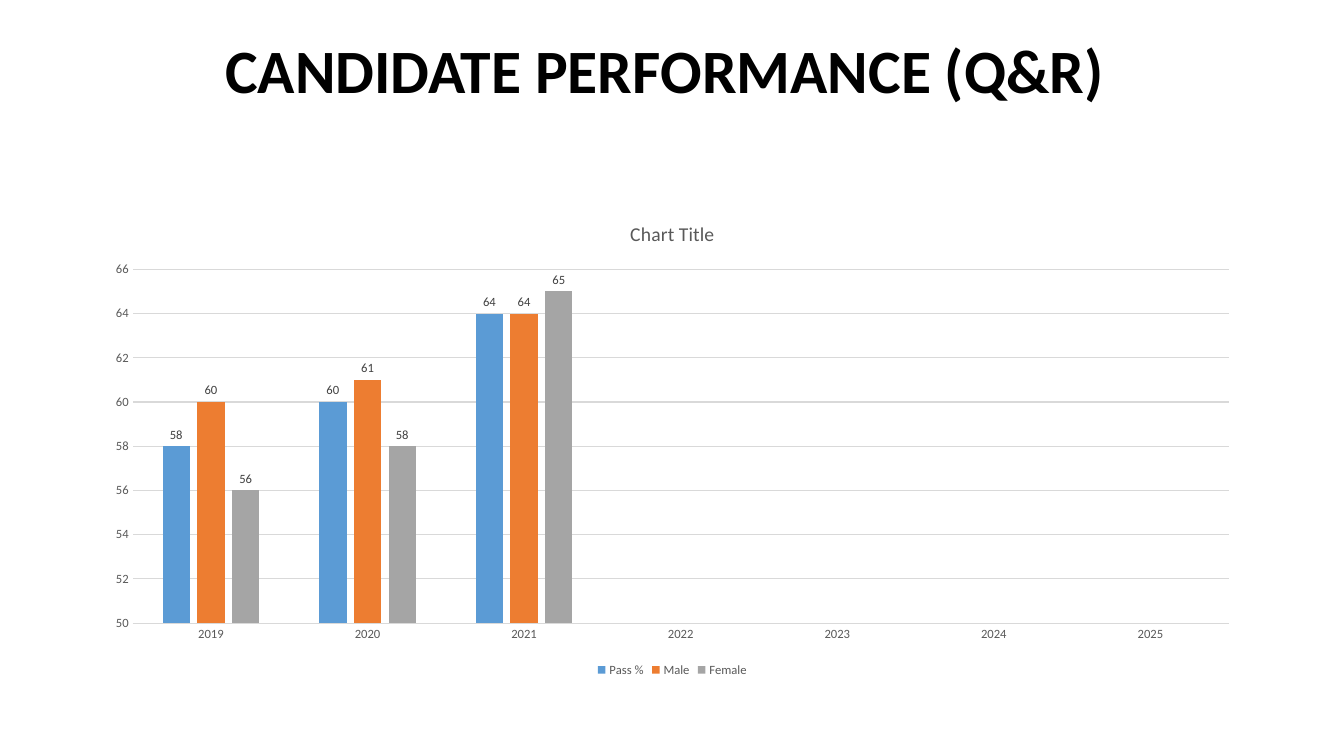
from pptx import Presentation
from pptx.chart.data import CategoryChartData
from pptx.dml.color import RGBColor
from pptx.enum.chart import (XL_CHART_TYPE, XL_LABEL_POSITION,
                             XL_LEGEND_POSITION, XL_TICK_MARK)
from pptx.enum.text import MSO_ANCHOR, PP_ALIGN
from pptx.util import Pt

COLUMNS = XL_CHART_TYPE.COLUMN_CLUSTERED
OUTSIDE = XL_LABEL_POSITION.OUTSIDE_END
BOTTOM = XL_LEGEND_POSITION.BOTTOM
NO_TICK = XL_TICK_MARK.NONE
MIDDLE = MSO_ANCHOR.MIDDLE
CENTER = PP_ALIGN.CENTER

BLACK = RGBColor(0x00, 0x00, 0x00)
DARK = RGBColor(0x40, 0x40, 0x40)
GRAY = RGBColor(0x59, 0x59, 0x59)
PALE = RGBColor(0xD9, 0xD9, 0xD9)
BLUE = RGBColor(0x5B, 0x9B, 0xD5)
ORANGE = RGBColor(0xED, 0x7D, 0x31)
SILVER = RGBColor(0xA5, 0xA5, 0xA5)

FACE = "Calibri"
HEADING = "CANDIDATE PERFORMANCE (Q&R) "
CAPTION = "Chart Title"
YEARS = [str(year) for year in range(2019, 2026)]
SERIES = [
    ("Pass %", BLUE, (58, 60, 64)),
    ("Male", ORANGE, (60, 61, 64)),
    ("Female", SILVER, (56, 58, 65)),
]
SCALE = {"minimum_scale": 50, "maximum_scale": 66, "major_unit": 2}
WIDTH, HEIGHT = 960, 540
HEAD_BOX = (0, 0, WIDTH, 104.4)
CHART_BOX = (66.24, 144, 828, 342.72)


def style(font, size, color, bold=False):
    for name, value in {"name": FACE, "size": Pt(size), "bold": bold}.items():
        setattr(font, name, value)
    font.color.rgb = color


def rule(line):
    line.color.rgb = PALE
    line.width = Pt(0.75)


def add_heading(slide):
    frame = slide.shapes.add_textbox(*map(Pt, HEAD_BOX)).text_frame
    frame.word_wrap = True
    frame.vertical_anchor = MIDDLE
    para = frame.paragraphs[0]
    para.alignment = CENTER
    para.line_spacing = 0.9
    run = para.add_run()
    run.text = HEADING
    style(run.font, 44, BLACK, True)


def add_columns(slide):
    data = CategoryChartData()
    data.categories = YEARS
    for name, _, values in SERIES:
        gaps = (None,) * (len(YEARS) - len(values))
        data.add_series(name, values + gaps)
    chart = slide.shapes.add_chart(COLUMNS, *map(Pt, CHART_BOX), data).chart
    style(chart.font, 10, BLACK)

    chart.has_title = True
    chart.chart_title.include_in_layout = False
    para = chart.chart_title.text_frame.paragraphs[0]
    run = para.add_run()
    run.text = CAPTION
    style(run.font, 14, GRAY)

    chart.has_legend = True
    chart.legend.position = BOTTOM
    chart.legend.include_in_layout = False
    style(chart.legend.font, 9, GRAY)

    years, marks = chart.category_axis, chart.value_axis
    for axis in (years, marks):
        axis.major_tick_mark = axis.minor_tick_mark = NO_TICK
        style(axis.tick_labels.font, 9, GRAY)
    rule(years.format.line)
    marks.format.line.fill.background()
    rule(marks.major_gridlines.format.line)
    for name, value in SCALE.items():
        setattr(marks, name, value)

    plot = chart.plots[0]
    plot.gap_width = 219
    plot.overlap = -27
    plot.vary_by_categories = False
    for series, (_, color, _) in zip(plot.series, SERIES):
        series.format.fill.solid()
        series.format.fill.fore_color.rgb = color
        series.invert_if_negative = False
        labels = series.data_labels
        labels.show_value = True
        labels.position = OUTSIDE
        style(labels.font, 9, DARK)


def main():
    deck = Presentation()
    deck.slide_width, deck.slide_height = Pt(WIDTH), Pt(HEIGHT)
    slide = deck.slides.add_slide(deck.slide_layouts[6])
    add_heading(slide)
    add_columns(slide)
    deck.save("out.pptx")


if __name__ == "__main__":
    main()
